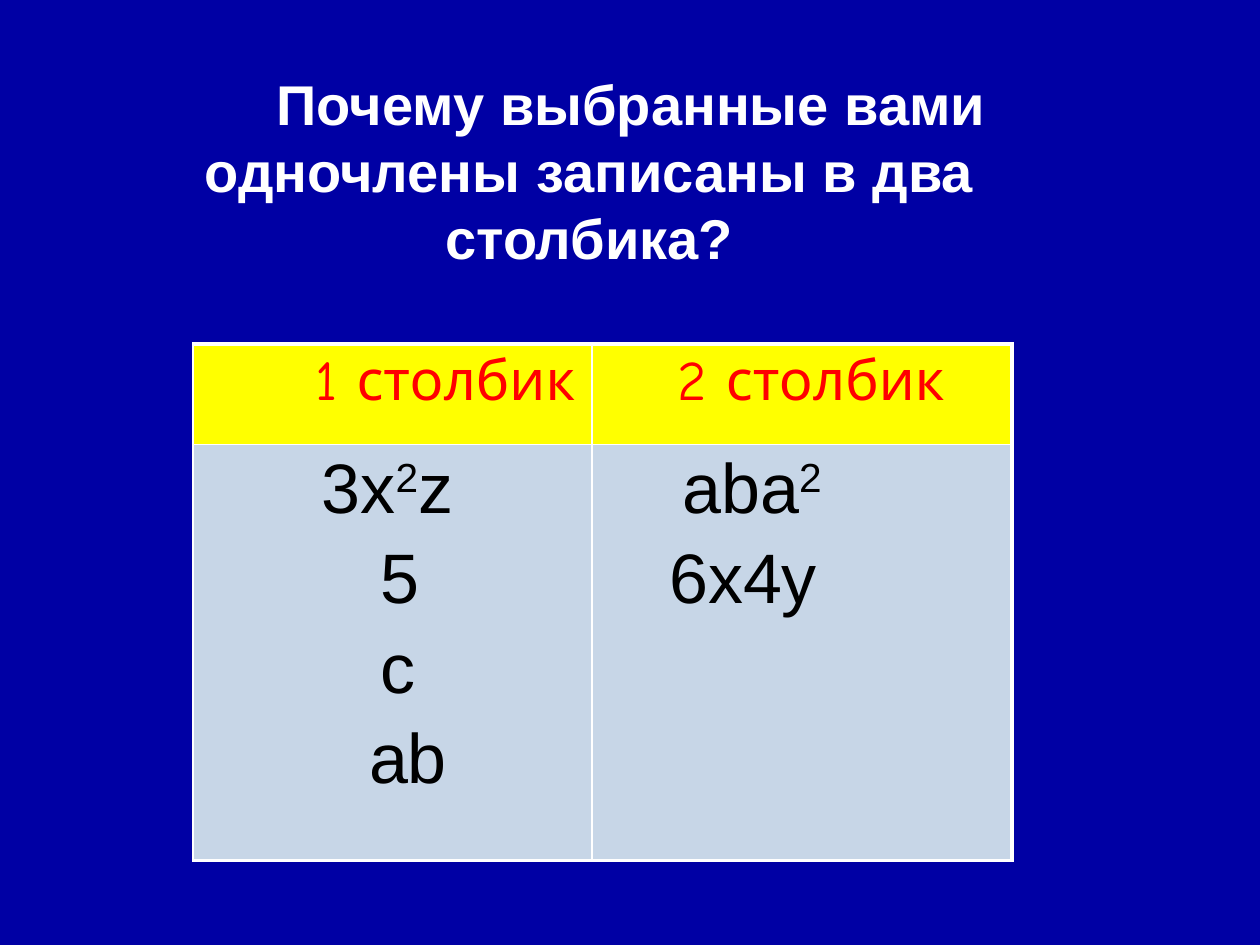
from dataclasses import dataclass

from lxml.etree import SubElement
from pptx import Presentation
from pptx.dml.color import RGBColor as RGB
from pptx.enum.text import MSO_ANCHOR as Anchor, MSO_AUTO_SIZE as AutoSize, PP_ALIGN as Align
from pptx.oxml.ns import qn
from pptx.util import Pt


@dataclass(frozen=True)
class Theme:
    background: str = "0000A4"
    white: str = "FFFFFF"
    black: str = "000000"
    red: str = "FF0000"
    header_fill: str = "FFFF00"
    body_fill: str = "C7D6E7"
    font: str = "Arial"
    header_font: str = "Comic Neue"
    title_size: float = 32
    header_size: float = 32
    body_size: float = 40
    thin: float = 1
    thick: float = 2.25


THEME = Theme()

TITLE = "Почему выбранные вами одночлены записаны в два столбика?"

# Each line is its text and its left margin in points; ^ encloses a superscript
HEADERS = [("1 столбик", 63), ("2 столбик", 42)]
MONOMIALS = [
    [("3x^2^z", 66.5), ("5", 100), ("c", 100), ("ab", 93.5)],
    [("aba^2^", 44.5), ("6x4y", 37)],
]


def write(paragraph, text, *, size, color, font=THEME.font, bold=False,
          align=Align.LEFT, margin=0, first_indent=0, before=0, line=None):
    """Fill a paragraph, raising the parts of the text between ^ marks."""
    properties = paragraph._p.get_or_add_pPr()
    properties.set("marL", str(Pt(margin)))
    properties.set("indent", str(Pt(first_indent)))
    paragraph.alignment = align
    paragraph.space_before = Pt(before)
    if line:
        paragraph.line_spacing = Pt(line)
    for index, part in enumerate(text.split("^")):
        if not part:
            continue
        run = paragraph.add_run()
        run.text = part
        run.font.name, run.font.size, run.font.bold = font, Pt(size), bold
        run.font.color.rgb = RGB.from_string(color)
        if index % 2:
            run._r.get_or_add_rPr().set("baseline", "30000")


def add_title(slide):
    title = slide.shapes.title
    title.left, title.top, title.width, title.height = Pt(67.5), Pt(36), Pt(538.5), Pt(124)
    frame = title.text_frame
    frame.word_wrap = True
    frame.auto_size = AutoSize.NONE
    frame.vertical_anchor = Anchor.TOP
    write(frame.paragraphs[0], TITLE, size=THEME.title_size, color=THEME.white,
          bold=True, align=Align.CENTER, first_indent=48, line=38.3)


def set_borders(cell, **widths):
    properties = cell._tc.get_or_add_tcPr()
    for side in "LRTB":
        line = SubElement(properties, qn(f"a:ln{side}"), w=str(Pt(widths[side])))
        fill = SubElement(line, qn("a:solidFill"))
        SubElement(fill, qn("a:srgbClr"), val=THEME.white)


def fill_cell(cell, lines, fill, **text_format):
    cell.fill.solid()
    cell.fill.fore_color.rgb = RGB.from_string(fill)
    frame = cell.text_frame
    for index, (text, margin) in enumerate(lines):
        paragraph = frame.add_paragraph() if index else frame.paragraphs[0]
        write(paragraph, text, margin=margin, before=6.6 if index else 0, **text_format)


def add_monomial_table(slide):
    table = slide.shapes.add_table(2, 2, Pt(110.2), Pt(196.6), Pt(468), Pt(295.2)).table
    table.first_row = table.horz_banding = False
    for column, width in zip(table.columns, (228, 240)):
        column.width = Pt(width)
    for row, height in zip(table.rows, (57.4, 237.8)):
        row.height = Pt(height)

    for column, (header, monomials) in enumerate(zip(HEADERS, MONOMIALS)):
        top, bottom = table.cell(0, column), table.cell(1, column)
        # Top, right and bottom of the table are thick
        right = THEME.thick if column == len(HEADERS) - 1 else THEME.thin
        set_borders(top, L=THEME.thin, R=right, T=THEME.thick, B=THEME.thin)
        set_borders(bottom, L=THEME.thin, R=right, T=THEME.thin, B=THEME.thick)
        fill_cell(top, [header], THEME.header_fill, size=THEME.header_size,
                  color=THEME.red, font=THEME.header_font)
        fill_cell(bottom, monomials, THEME.body_fill, size=THEME.body_size,
                  color=THEME.black)


def main():
    presentation = Presentation()
    presentation.slide_width, presentation.slide_height = Pt(720), Pt(540)
    slide = presentation.slides.add_slide(presentation.slide_layouts[5])
    slide.background.fill.solid()
    slide.background.fill.fore_color.rgb = RGB.from_string(THEME.background)

    # Table below, question above
    add_monomial_table(slide)
    add_title(slide)
    presentation.save("out.pptx")


if __name__ == "__main__":
    main()
